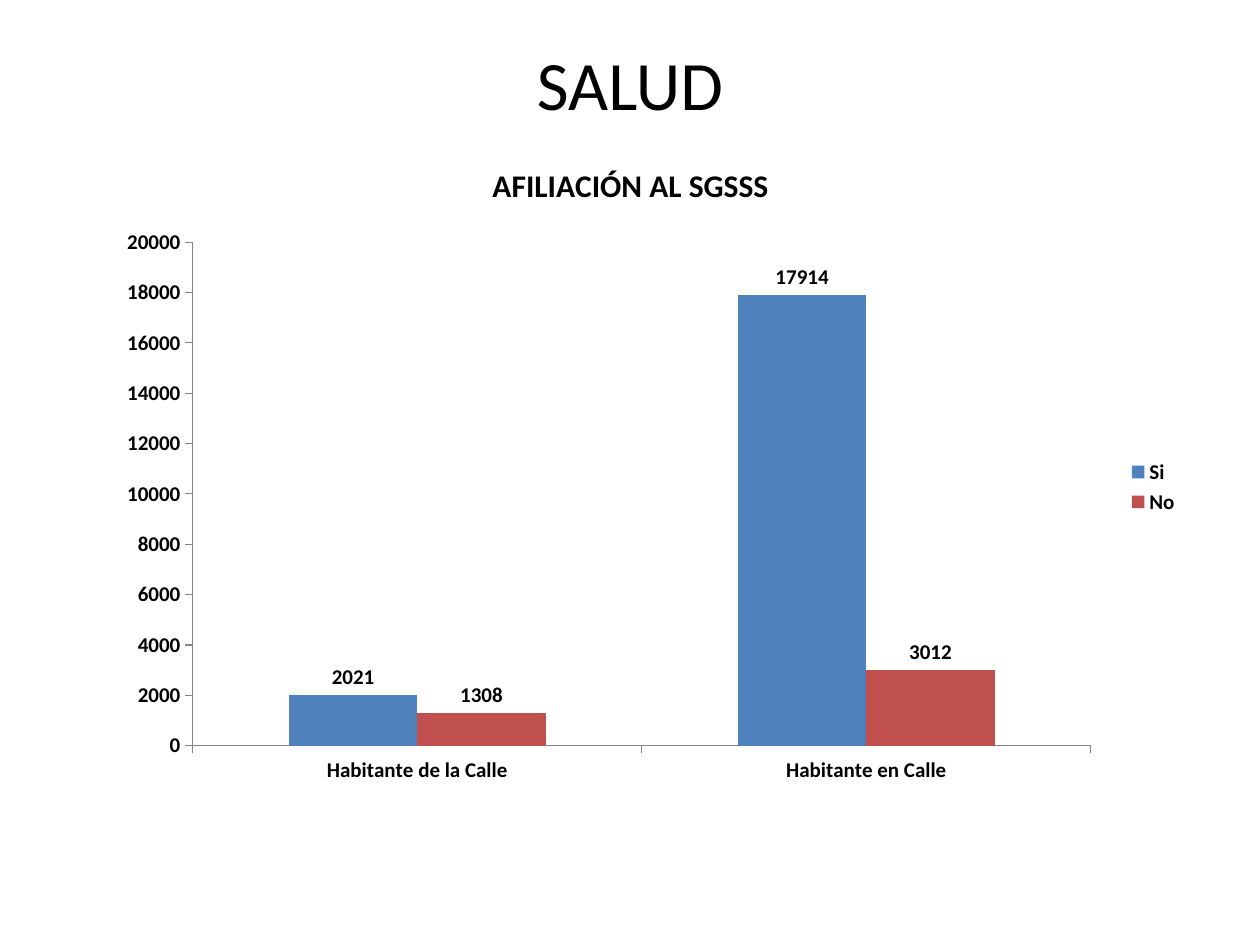
from lxml import etree
from pptx import Presentation
from pptx.chart.data import CategoryChartData
from pptx.dml.color import RGBColor
from pptx.enum.chart import XL_CHART_TYPE as CT, XL_LABEL_POSITION as LP
from pptx.enum.chart import XL_LEGEND_POSITION as LG, XL_TICK_MARK as TM
from pptx.enum.text import MSO_ANCHOR, PP_ALIGN
from pptx.oxml.ns import qn
from pptx.util import Inches, Pt


def rgb(value):
    return RGBColor.from_string(value)


def write(tf, text, size, bold=False, color="000000", font="Calibri"):
    p = tf.paragraphs[0]
    p.alignment = PP_ALIGN.CENTER
    r = p.add_run()
    r.text = text
    r.font.size, r.font.bold, r.font.name = Pt(size), bold, font
    r.font.color.rgb = rgb(color)


prs = Presentation()
prs.slide_width, prs.slide_height = Inches(10), Inches(7.5)
W, H = prs.slide_width, prs.slide_height
s = prs.slides.add_slide(prs.slide_layouts[6])

# Slide title
box = s.shapes.add_textbox(int(W * 0.05), int(H * 0.04), int(W * 0.9), int(H * 0.096))
tf = box.text_frame
tf.word_wrap = True
tf.vertical_anchor = MSO_ANCHOR.MIDDLE
write(tf, "SALUD", 39.6)

# Affiliation chart
data = CategoryChartData(number_format="General")
data.categories = ["Habitante de la Calle", "Habitante en Calle"]
data.add_series("Si", [2021, 17914])
data.add_series("No", [1308, 3012])
chart = s.shapes.add_chart(CT.COLUMN_CLUSTERED, Inches(0.55), Inches(1.09),
                           Inches(8.91), Inches(5.55), data).chart
chart.font.name, chart.font.size, chart.font.bold = "Calibri", Pt(12), True
chart.font.color.rgb = rgb("000000")
write(chart.chart_title.text_frame, "AFILIACIÓN AL SGSSS", 18, bold=True)
chart.chart_title.include_in_layout = False
chart.has_legend = True
chart.legend.position = LG.RIGHT
chart.legend.include_in_layout = False

# Columns and their values
plot = chart.plots[0]
plot.gap_width, plot.overlap, plot.vary_by_categories = 150, 0, False
for series, color in zip(plot.series, ["4F81BD", "C0504D"]):
    series.format.fill.solid()
    series.format.fill.fore_color.rgb = rgb(color)
    labels = series.data_labels
    labels.show_value = True
    labels.position = LP.OUTSIDE_END

# Axes
for axis in (chart.category_axis, chart.value_axis):
    axis.has_major_gridlines = False
    axis.major_tick_mark, axis.minor_tick_mark = TM.OUTSIDE, TM.NONE
    axis.format.line.color.rgb = rgb("868686")
    axis.format.line.width = Pt(0.75)
value_axis = chart.value_axis
value_axis.minimum_scale, value_axis.maximum_scale = 0, 20000
value_axis.major_unit = 2000

# Plot area as shares of the chart
area = chart._chartSpace.chart.plotArea
for old in area.findall(qn("c:layout")):
    area.remove(old)
layout = etree.Element(qn("c:layout"))
area.insert(0, layout)
manual = etree.SubElement(layout, qn("c:manualLayout"))
for tag, value in [("layoutTarget", "inner"), ("xMode", "edge"), ("yMode", "edge"),
                   ("x", "0.11"), ("y", "0.15"), ("w", "0.8"), ("h", "0.72")]:
    etree.SubElement(manual, qn(f"c:{tag}")).set("val", value)

prs.save("out.pptx")
